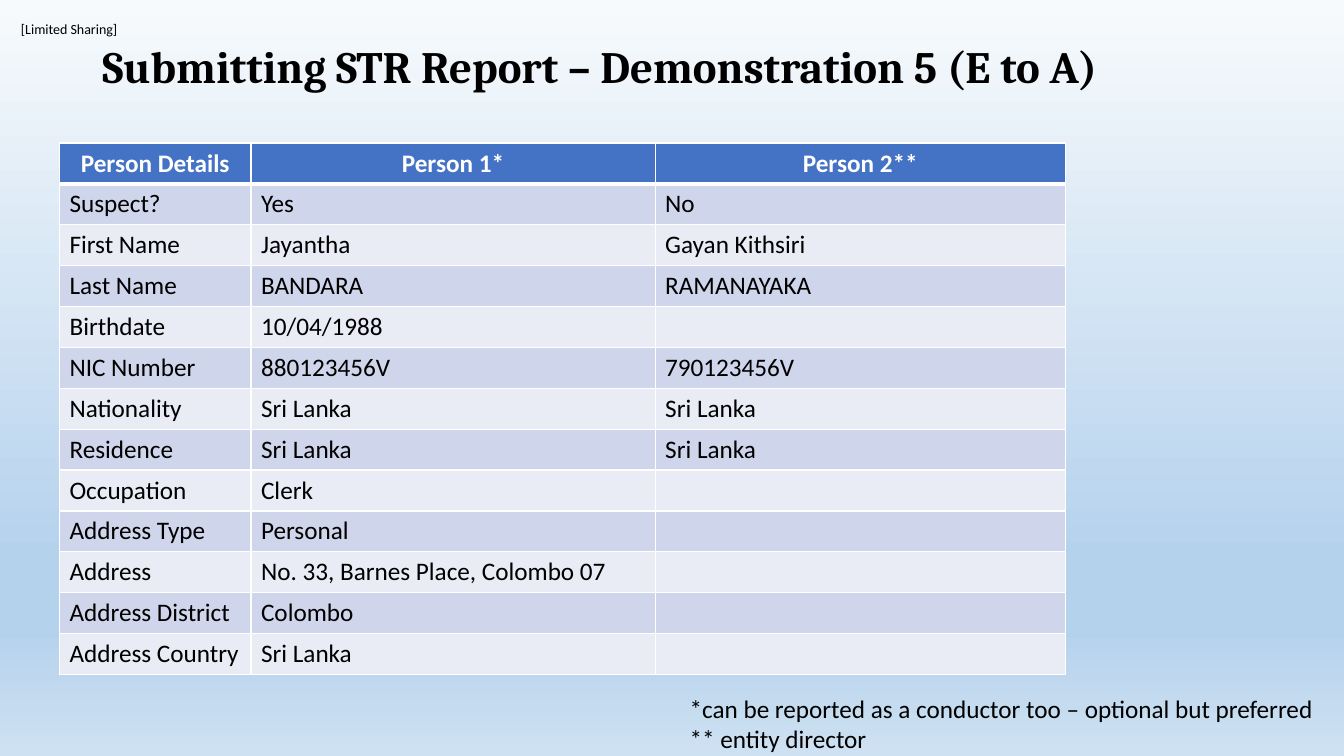
from dataclasses import dataclass

import pptx
import pptx.dml.color
import pptx.enum.text
import pptx.oxml
import pptx.oxml.ns
import pptx.util
from lxml import etree

Pt = pptx.util.Pt
ALIGN = pptx.enum.text.PP_ALIGN
ANCHOR = pptx.enum.text.MSO_ANCHOR
AUTO_SIZE = pptx.enum.text.MSO_AUTO_SIZE
qn = pptx.oxml.ns.qn


@dataclass(frozen=True)
class Theme:
    ink: str = "000000"
    white: str = "FFFFFF"
    header: str = "4472C4"
    bands: tuple[str, str] = ("CFD5EA", "E9EBF5")
    sky: tuple[tuple[int, str], ...] = (
        (0, "F7FAFD"), (74, "B5D2EC"), (83, "B5D2EC"), (100, "CEE1F2"))
    body_font: str = "Calibri"
    title_font: str = "Cambria"
    label_size: float = 10
    body_size: float = 18
    title_size: float = 32
    rule: float = 1
    header_rule: float = 3


@dataclass(frozen=True)
class Box:
    left: float
    top: float
    width: float
    height: float


@dataclass(frozen=True)
class Detail:
    label: str
    person_1: str
    person_2: str = ""


THEME = Theme()
COLUMN_WIDTHS = (136.8, 288.7, 293.1)
ROW_HEIGHT = 29.2
HEADINGS = Detail("Person Details", "Person 1*", "Person 2**")
DETAILS = (
    Detail("Suspect?", "Yes", "No"),
    Detail("First Name", "Jayantha", "Gayan Kithsiri"),
    Detail("Last Name", "BANDARA", "RAMANAYAKA"),
    Detail("Birthdate", "10/04/1988"),
    Detail("NIC Number", "880123456V", "790123456V"),
    Detail("Nationality", "Sri Lanka", "Sri Lanka"),
    Detail("Residence", "Sri Lanka", "Sri Lanka"),
    Detail("Occupation", "Clerk"),
    Detail("Address Type", "Personal"),
    Detail("Address", "No. 33, Barnes Place, Colombo 07"),
    Detail("Address District", "Colombo"),
    Detail("Address Country", "Sri Lanka"),
)


def rgb(color: str) -> pptx.dml.color.RGBColor:
    return pptx.dml.color.RGBColor.from_string(color)


def write(frame, text: str, *, size: float = THEME.body_size,
          font: str = THEME.body_font, color: str = THEME.ink,
          bold: bool = False, align=ALIGN.LEFT, spacing: float = 1.0) -> None:
    frame.text = text
    for paragraph in frame.paragraphs:
        paragraph.alignment = align
        paragraph.line_spacing = spacing
        paragraph.font.size = Pt(size)
        for run in paragraph.runs:
            run.font.name = font
            run.font.size = Pt(size)
            run.font.bold = bold
            run.font.color.rgb = rgb(color)


def add_text_frame(slide, box: Box):
    frame = slide.shapes.add_textbox(
        Pt(box.left), Pt(box.top), Pt(box.width), Pt(box.height)).text_frame
    frame.word_wrap = True
    return frame


def paint_background(slide) -> None:
    fill = slide.background.fill
    fill.gradient()
    fill.gradient_angle = 270
    stops = next(slide.element.iter(qn("a:gsLst")))
    for stop in list(stops):
        stops.remove(stop)
    for position, color in THEME.sky:
        stop = etree.SubElement(stops, qn("a:gs"), pos=str(position * 1000))
        etree.SubElement(stop, qn("a:srgbClr"), val=color)


def add_border(cell, side: str, width: float) -> None:
    properties = cell._tc.get_or_add_tcPr()
    line = etree.SubElement(properties, qn(f"a:ln{side}"), w=str(Pt(width)))
    fill = etree.SubElement(line, qn("a:solidFill"))
    etree.SubElement(fill, qn("a:srgbClr"), val=THEME.white)


def fill_cell(cell, text: str, row: int) -> None:
    is_header = row == 0
    top = THEME.header_rule if row == 1 else THEME.rule
    bottom = THEME.header_rule if is_header else THEME.rule
    for side, width in (("L", THEME.rule), ("R", THEME.rule),
                        ("T", top), ("B", bottom)):
        add_border(cell, side, width)
    cell.fill.solid()
    cell.fill.fore_color.rgb = rgb(
        THEME.header if is_header else THEME.bands[(row - 1) % 2])
    write(cell.text_frame, text, bold=is_header,
          color=THEME.white if is_header else THEME.ink,
          align=ALIGN.CENTER if is_header else ALIGN.LEFT)


def add_person_table(slide, left: float, top: float) -> None:
    rows = (HEADINGS, *DETAILS)
    persons = slide.shapes.add_table(
        len(rows), len(COLUMN_WIDTHS), Pt(left), Pt(top),
        Pt(sum(COLUMN_WIDTHS)), Pt(ROW_HEIGHT * len(rows))).table
    for column, width in zip(persons.columns, COLUMN_WIDTHS):
        column.width = Pt(width)
    for index, detail in enumerate(rows):
        persons.rows[index].height = Pt(ROW_HEIGHT)
        texts = (detail.label, detail.person_1, detail.person_2)
        for column, text in enumerate(texts):
            fill_cell(persons.cell(index, column), text, index)


def main() -> None:
    """Build the slide on submitting a suspicious transaction report."""
    deck = pptx.Presentation()
    deck.slide_width, deck.slide_height = Pt(960), Pt(540)
    slide = deck.slides.add_slide(deck.slide_layouts[6])
    paint_background(slide)

    sharing = add_text_frame(slide, Box(15, 15, 71.5, 12.2))
    sharing.margin_left = sharing.margin_right = 0
    sharing.margin_top = sharing.margin_bottom = 0
    sharing.word_wrap = False
    sharing.auto_size = AUTO_SIZE.SHAPE_TO_FIT_TEXT
    write(sharing, "[Limited Sharing]", size=THEME.label_size)

    title = add_text_frame(slide, Box(66, 18, 828, 62.6))
    title.vertical_anchor = ANCHOR.MIDDLE
    write(title, "Submitting STR Report – Demonstration 5 (E to A)",
          size=THEME.title_size, font=THEME.title_font, bold=True, spacing=0.9)

    add_person_table(slide, 42.5, 102.2)

    footnotes = add_text_frame(slide, Box(485.5, 491.8, 485.5, 50.9))
    footnotes.auto_size = AUTO_SIZE.SHAPE_TO_FIT_TEXT
    write(footnotes,
          "*can be reported as a conductor too – optional but preferred\n"
          "** entity director")

    deck.save("out.pptx")


if __name__ == "__main__":
    main()
